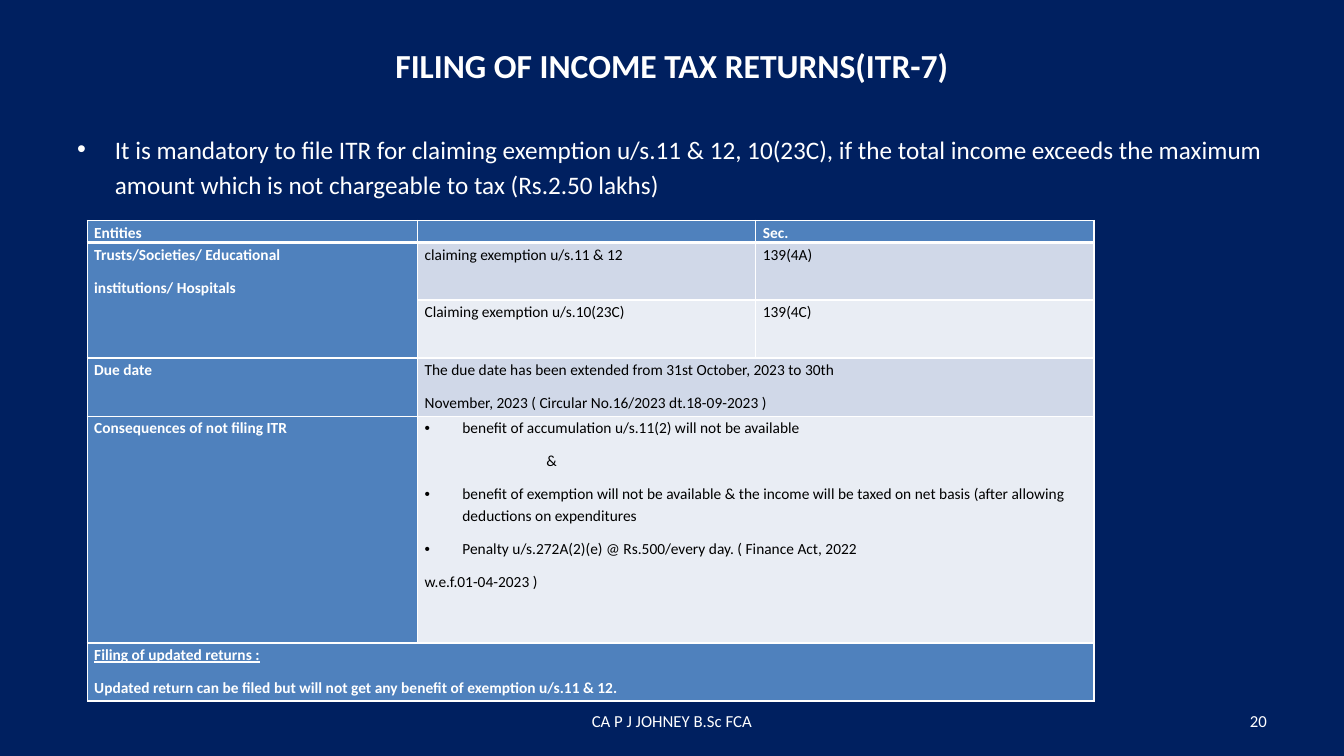
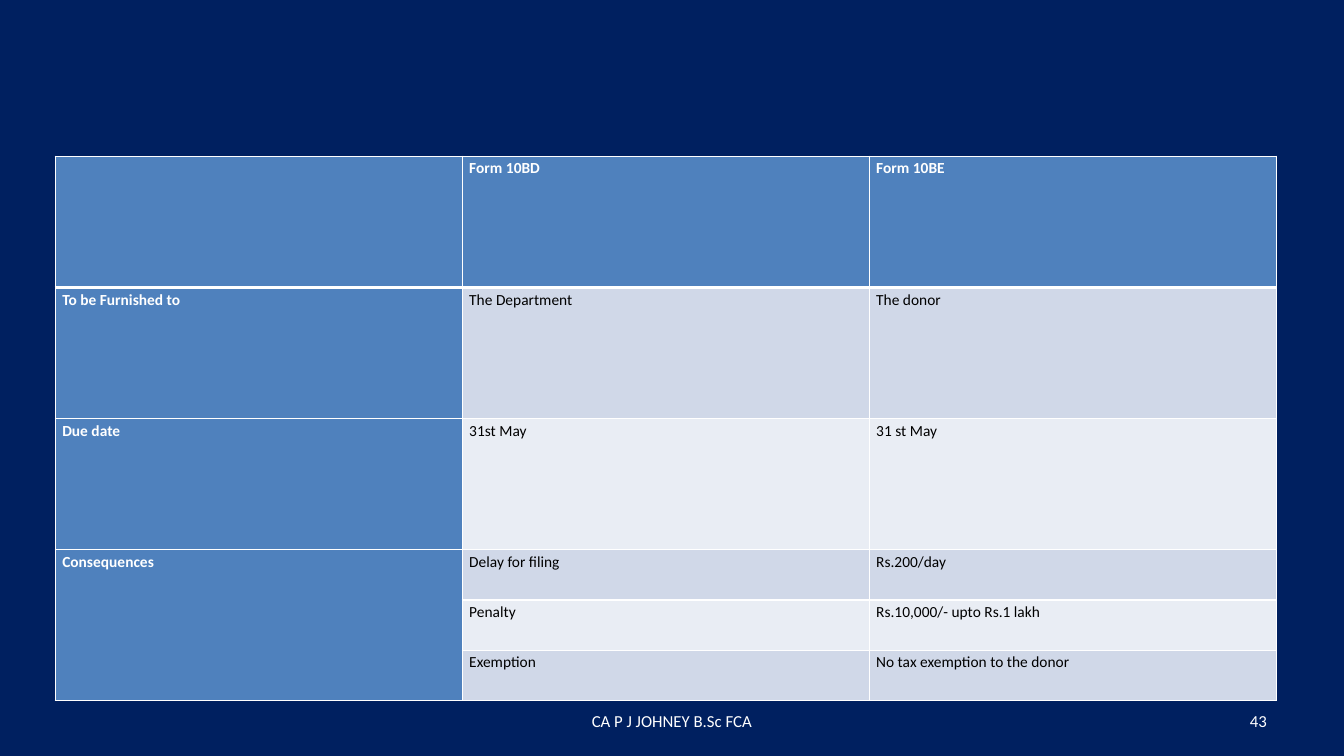
import dataclasses

import lxml.etree
import pptx
import pptx.dml.color
import pptx.enum.text
import pptx.oxml.ns
import pptx.util

Pt = pptx.util.Pt
RGBColor = pptx.dml.color.RGBColor
PP_ALIGN = pptx.enum.text.PP_ALIGN
MSO_ANCHOR = pptx.enum.text.MSO_ANCHOR
qn = pptx.oxml.ns.qn

NAVY = RGBColor(0x00, 0x20, 0x60)
BLUE = RGBColor(0x4F, 0x81, 0xBD)
BAND_DARK = RGBColor(0xD0, 0xD8, 0xE8)
BAND_LIGHT = RGBColor(0xE9, 0xED, 0xF4)
WHITE = RGBColor(0xFF, 0xFF, 0xFF)
BLACK = RGBColor(0x00, 0x00, 0x00)

FONT = "Calibri"
CELL_SIZE = 11
HANGING = 27
THIN, THICK = 1, 3


@dataclasses.dataclass
class Para:
    text: str
    bullet: bool = False
    left: float = 0
    underline: bool = False


def add_run(p, text, size, color, bold=False, underline=False):
    r = p.add_run()
    r.text = text
    r.font.name = FONT
    r.font.size = Pt(size)
    r.font.color.rgb = color
    r.font.bold = bold
    if underline:
        r.font.underline = True


def set_indent(p, left, first=0):
    pPr = p._p.get_or_add_pPr()
    pPr.set("marL", str(Pt(left)))
    pPr.set("indent", str(Pt(first)))
    return pPr


def add_bullet(p):
    pPr = set_indent(p, HANGING, -HANGING)
    lxml.etree.SubElement(pPr, qn("a:buFont")).set("typeface", "Arial")
    lxml.etree.SubElement(pPr, qn("a:buChar")).set("char", "•")


def set_spacing(p):
    p.line_spacing = 1.15
    p.space_after = Pt(8)


def add_text(s, box, text, size, align=PP_ALIGN.LEFT, anchor=MSO_ANCHOR.MIDDLE, bold=False):
    tf = s.shapes.add_textbox(*map(Pt, box)).text_frame
    tf.word_wrap = True
    tf.vertical_anchor = anchor
    p = tf.paragraphs[0]
    p.alignment = align
    add_run(p, text, size, WHITE, bold)
    return p


def add_title(s, text):
    add_text(s, (48, 11, 864, 71), text, 24, PP_ALIGN.CENTER, bold=True)


def add_body(s, text):
    p = add_text(s, (48, 89, 864, 62), text, 18, anchor=MSO_ANCHOR.TOP)
    set_spacing(p)
    add_bullet(p)


def add_footer(s, number):
    add_text(s, (328, 500, 304, 29), "CA P J JOHNEY B.Sc FCA", 12, PP_ALIGN.CENTER)
    add_text(s, (688, 500, 224, 29), str(number), 12, PP_ALIGN.RIGHT)


def set_borders(cell, top, bottom):
    tcPr = cell._tc.get_or_add_tcPr()
    sides = (("L", THIN), ("R", THIN), ("T", top), ("B", bottom))
    for i, (side, width) in enumerate(sides):
        ln = lxml.etree.Element(qn("a:ln" + side), w=str(Pt(width)))
        fill = lxml.etree.SubElement(ln, qn("a:solidFill"))
        lxml.etree.SubElement(fill, qn("a:srgbClr")).set("val", str(WHITE))
        tcPr.insert(i, ln)


def fill_cell(cell, content, accent):
    paras = content if isinstance(content, list) else [content]
    tf = cell.text_frame
    for i, para in enumerate(paras):
        if isinstance(para, str):
            para = Para(para)
        p = tf.paragraphs[0] if i == 0 else tf.add_paragraph()
        set_spacing(p)
        if not para.text:
            end = lxml.etree.SubElement(p._p, qn("a:endParaRPr"))
            end.set("sz", str(CELL_SIZE * 100))
            continue
        if para.bullet:
            add_bullet(p)
        elif para.left:
            set_indent(p, para.left)
        add_run(p, para.text, CELL_SIZE, WHITE if accent else BLACK, accent, para.underline)


def add_grid(s, left, top, widths, heights, rows, merges):
    shape = s.shapes.add_table(len(rows), len(widths), Pt(left), Pt(top),
                               Pt(sum(widths)), Pt(sum(heights)))
    table = shape.table
    table.first_row = False
    table.horz_banding = False
    for column, width in zip(table.columns, widths):
        column.width = Pt(width)
    for row, height in zip(table.rows, heights):
        row.height = Pt(height)
    for i, row in enumerate(rows):
        for j, content in enumerate(row):
            cell = table.cell(i, j)
            accent = i == 0 or j == 0
            cell.margin_left = cell.margin_right = Pt(5)
            cell.margin_top = cell.margin_bottom = Pt(0)
            cell.fill.solid()
            cell.fill.fore_color.rgb = BLUE if accent else BAND_DARK if i % 2 else BAND_LIGHT
            set_borders(cell, THICK if i == 1 else THIN, THICK if i == 0 else THIN)
            fill_cell(cell, content, accent)
    for first, last in merges:
        table.cell(*first).merge(table.cell(*last))


def add_returns_slide(prs):
    s = prs.slides.add_slide(prs.slide_layouts[6])
    add_title(s, "FILING OF INCOME TAX RETURNS(ITR-7)")
    add_body(s, "It is mandatory to file ITR for claiming exemption u/s.11 & 12, 10(23C), "
                "if the total income exceeds the maximum amount which is not chargeable "
                "to tax (Rs.2.50 lakhs)")
    consequences = [
        Para("benefit of accumulation u/s.11(2) will not be available", bullet=True),
        Para("&", left=87),
        Para("benefit of exemption will not be available & the income will be taxed "
             "on net basis (after allowing deductions on expenditures", bullet=True),
        Para("Penalty u/s.272A(2)(e) @ Rs.500/every day. ( Finance Act, 2022", bullet=True),
        "w.e.f.01-04-2023 )",
    ]
    rows = [
        ["Entities", "", "Sec."],
        [["Trusts/Societies/ Educational", "institutions/ Hospitals"],
         "claiming exemption u/s.11 & 12", "139(4A)"],
        ["", "Claiming exemption u/s.10(23C)", "139(4C)"],
        ["Due date",
         ["The due date has been extended from 31st October, 2023 to 30th",
          "November, 2023 ( Circular No.16/2023 dt.18-09-2023 )"], ""],
        ["Consequences of not filing ITR", consequences, ""],
        [[Para("Filing of updated returns :", underline=True),
          "Updated return can be filed but will not get any benefit of exemption u/s.11 & 12."],
         "", ""],
    ]
    merges = [((1, 0), (2, 0)), ((3, 1), (3, 2)), ((4, 1), (4, 2)), ((5, 0), (5, 2))]
    add_grid(s, 62.3, 157.5, [236, 241.6, 241.6], [15.8, 41, 41.5, 41.5, 162, 41.5],
             rows, merges)
    add_footer(s, 20)


def add_forms_slide(prs):
    s = prs.slides.add_slide(prs.slide_layouts[6])
    rows = [
        ["", "Form 10BD", "Form 10BE"],
        ["To be Furnished to", "The Department", "The donor"],
        ["Due date", "31st May", "31 st May"],
        ["Consequences", "Delay for filing", "Rs.200/day"],
        ["", "Penalty", "Rs.10,000/- upto Rs.1 lakh"],
        ["", "Exemption", "No tax exemption to the donor"],
    ]
    add_grid(s, 39.5, 111.6, [290.7] * 3, [93.7] * 3 + [35.9] * 3, rows, [((3, 0), (5, 0))])
    add_footer(s, 43)


def main():
    prs = pptx.Presentation()
    prs.slide_width, prs.slide_height = Pt(960), Pt(540)
    background = prs.slide_master.background.fill
    background.solid()
    background.fore_color.rgb = NAVY
    add_returns_slide(prs)
    add_forms_slide(prs)
    prs.save("out.pptx")


if __name__ == "__main__":
    main()
